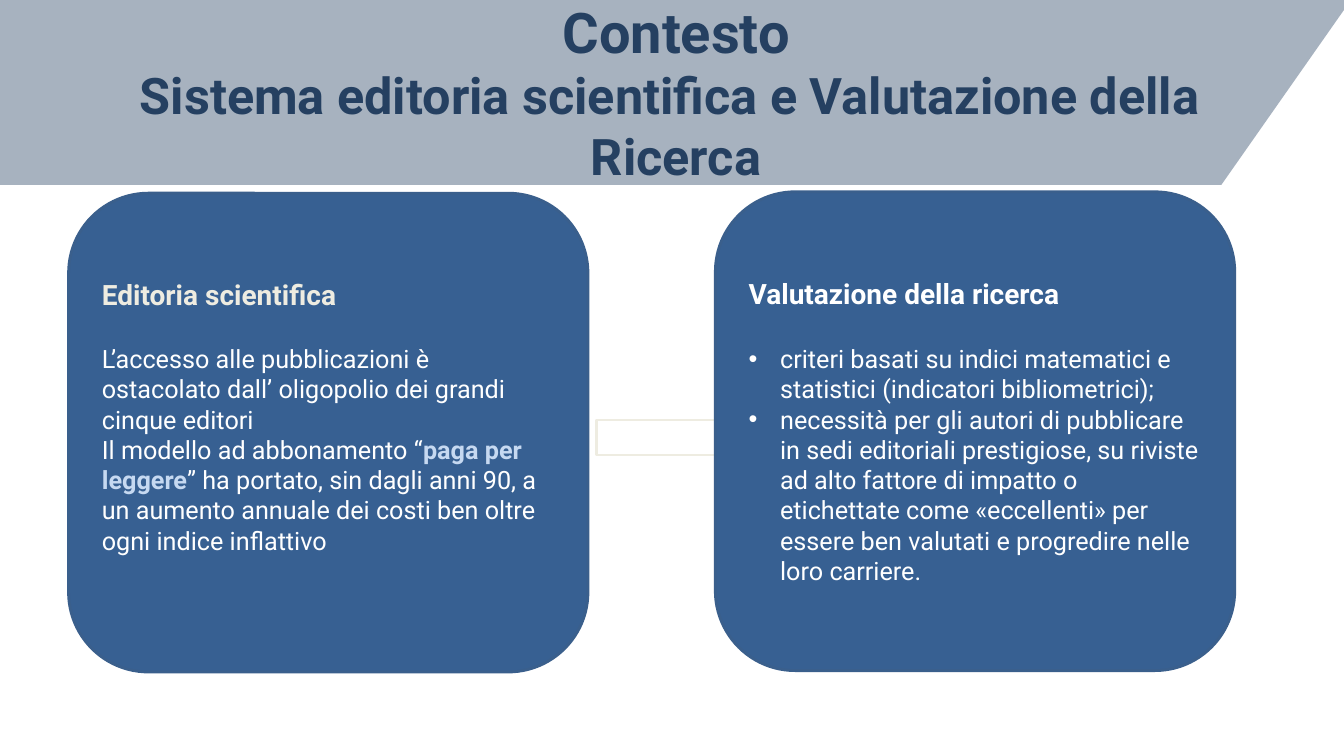
from lxml.etree import SubElement as Sub
from pptx import Presentation
from pptx.dml.color import RGBColor as Rgb
from pptx.enum.shapes import MSO_SHAPE as Kind
from pptx.enum.text import MSO_ANCHOR as Anchor, PP_ALIGN as Align
from pptx.oxml.ns import qn
from pptx.util import Pt

HUES = {"navy": "254061", "blue": "376092", "edge": "3A5F8C",
        "cream": "EEECE1", "sky": "C6D9F1", "white": "FFFFFF"}
FACE = "Roboto"

TITLE = [("Contesto", 40),
         ("Sistema editoria scientifica e Valutazione della ", 36),
         ("Ricerca", 36)]
BANNER = [(966, -1.4), (0, -1.4), (0, 132), (872.5, 132)]
BAR = (426, 300, 456, 25)
SIZE = (371, 342)

# Each body paragraph is a list of (words, colour, bold) runs.
PANELS = [
    {"spot": (49, 138), "head": ("Editoria scientifica", "cream"),
     "bullet": False, "foot": 27,
     "body": [
         [("L’accesso alle pubblicazioni è ostacolato dall’ oligopolio "
           "dei grandi cinque editori", "white", False)],
         [("Il modello ad abbonamento “", "white", False),
          ("paga per leggere", "sky", True),
          ("” ha portato, sin dagli anni 90, a un aumento annuale dei "
           "costi ben oltre ogni indice inflattivo", "white", False)]]},
    {"spot": (511, 137), "head": ("Valutazione della ricerca", "white"),
     "bullet": True, "foot": 3.6,
     "body": [
         [("criteri basati su indici matematici e statistici "
           "(indicatori bibliometrici);", "white", False)],
         [("necessità per gli autori di pubblicare in sedi editoriali "
           "prestigiose, su riviste ad alto fattore di impatto o "
           "etichettate come «eccellenti» per essere ben valutati e "
           "progredire nelle loro carriere.", "white", False)]]},
]


def assign(item, form):
    for name, value in form.items():
        setattr(item, name, value)


def paint(shape, fill, line=None):
    shape.shadow.inherit = False
    shape.fill.solid()
    shape.fill.fore_color.rgb = Rgb.from_string(HUES[fill])
    if line:
        shape.line.color.rgb = Rgb.from_string(HUES[line])
        shape.line.width = Pt(2)
    else:
        shape.line.fill.background()


def write(para, words, size, hue, bold):
    run = para.add_run()
    run.text = words
    assign(run.font, {"name": FACE, "size": Pt(size), "bold": bold})
    run.font.color.rgb = Rgb.from_string(HUES[hue])


def add_para(frame, first, align):
    para = frame.paragraphs[0] if first else frame.add_paragraph()
    para.alignment = align
    return para


def add_box(slide, kind, place, fill, line):
    box = slide.shapes.add_shape(kind, *map(Pt, place))
    paint(box, fill, line)
    return box


def add_banner(slide):
    points = [(Pt(x), Pt(y)) for x, y in BANNER]
    pen = slide.shapes.build_freeform(*points[0])
    pen.add_line_segments(points[1:], close=True)
    shape = pen.convert_to_shape()
    paint(shape, "navy")
    tint = next(shape.fill._xPr.iter(qn("a:srgbClr")))
    Sub(tint, qn("a:alpha"), val="40000")
    frame = shape.text_frame
    assign(frame, {"word_wrap": True, "vertical_anchor": Anchor.MIDDLE,
                   "margin_left": 0, "margin_right": 0,
                   "margin_top": 0, "margin_bottom": 0})
    for row, (words, size) in enumerate(TITLE):
        para = add_para(frame, row == 0, Align.CENTER)
        write(para, words, size, "navy", True)


def add_bullet(para):
    props = para._p.get_or_add_pPr()
    props.set("marL", str(Pt(22.5)))
    props.set("indent", str(-Pt(22.5)))
    Sub(props, qn("a:buFont"), typeface="Arial")
    Sub(props, qn("a:buChar"), char="•")


def add_panel(slide, panel):
    box = add_box(slide, Kind.ROUNDED_RECTANGLE, panel["spot"] + SIZE,
                  "blue", "edge")
    frame = box.text_frame
    assign(frame, {"word_wrap": True, "vertical_anchor": Anchor.MIDDLE,
                   "margin_bottom": Pt(panel["foot"])})
    words, hue = panel["head"]
    head = add_para(frame, True, Align.LEFT)
    head.space_after = Pt(23.5)
    write(head, words, 20, hue, True)
    for runs in panel["body"]:
        para = add_para(frame, False, Align.LEFT)
        if panel["bullet"]:
            add_bullet(para)
        for words, hue, bold in runs:
            write(para, words, 18, hue, bold)


def main():
    deck = Presentation()
    assign(deck, {"slide_width": Pt(960), "slide_height": Pt(540)})
    slide = deck.slides.add_slide(deck.slide_layouts[6])
    add_box(slide, Kind.RECTANGLE, BAR, "white", "cream")
    add_banner(slide)
    for panel in PANELS:
        add_panel(slide, panel)
    deck.save("out.pptx")


if __name__ == "__main__":
    main()
